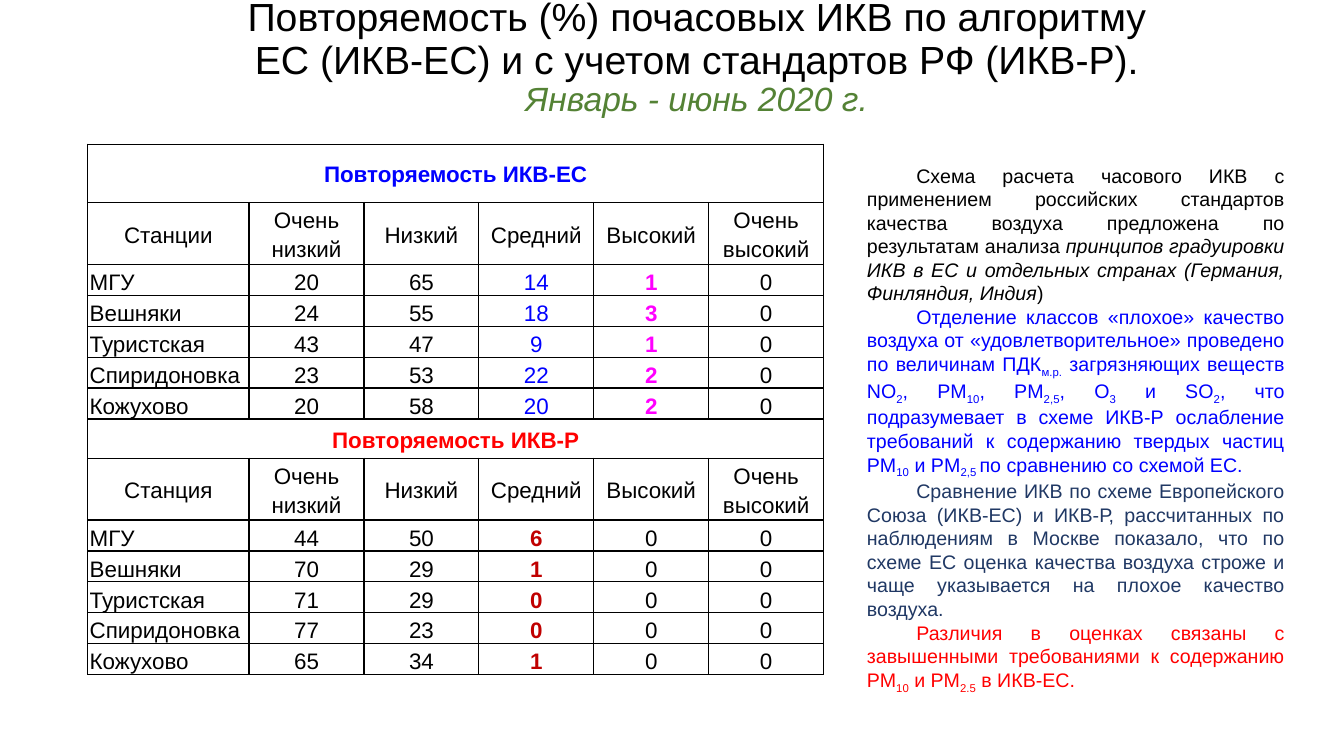
import pptx
import pptx.dml.color
import pptx.enum.text
import pptx.oxml
import pptx.oxml.ns
import pptx.util
from pptx.dml.color import RGBColor
from pptx.enum.text import MSO_ANCHOR, PP_ALIGN

SLIDE_WIDTH = pptx.util.Inches(13.33)
SLIDE_HEIGHT = pptx.util.Inches(7.5)
FONT = "Arial"

BLACK = RGBColor(0x00, 0x00, 0x00)
BLUE = RGBColor(0x00, 0x00, 0xFF)
RED = RGBColor(0xFF, 0x00, 0x00)
DARK_RED = RGBColor(0xC0, 0x00, 0x00)
MAGENTA = RGBColor(0xFF, 0x00, 0xFF)
GREEN = RGBColor(0x54, 0x82, 0x35)
NAVY = RGBColor(0x20, 0x38, 0x64)

# Table grid, in inches
COLUMN_WIDTHS = [1.6] + [1.14] * 5
HEADER_HEIGHT, DATA_HEIGHT = 0.58, 0.29
LEVELS = ["Очень низкий", "Низкий", "Средний", "Высокий", "Очень высокий"]
STATIONS = ["МГУ", "Вешняки", "Туристская", "Спиридоновка", "Кожухово"]

# Per section: title, its colour and height, station heading,
# values by station, (colour, bold) of marked columns
SECTIONS = [
    ("Повторяемость ИКВ-ЕС", BLUE, 0.58, "Станции",
     [(20, 65, 14, 1, 0), (24, 55, 18, 3, 0), (43, 47, 9, 1, 0),
      (23, 53, 22, 2, 0), (20, 58, 20, 2, 0)],
     {3: (BLUE, False), 4: (MAGENTA, True)}),
    ("Повторяемость ИКВ-Р", RED, 0.39, "Станция",
     [(44, 50, 6, 0, 0), (70, 29, 1, 0, 0), (71, 29, 0, 0, 0),
      (77, 23, 0, 0, 0), (65, 34, 1, 0, 0)],
     {3: (DARK_RED, True)}),
]

# Commentary: colour, subscript offset, runs as (text, style)
COMMENTS = [
    (BLACK, 0, [
        ("Схема расчета часового ИКВ с применением российских стандартов "
         "качества воздуха предложена по результатам анализа ", ""),
        ("принципов градуировки ИКВ в ЕС и отдельных странах "
         "(Германия, Финляндия, Индия", "italic"),
        (")", "")]),
    (BLUE, -25, [
        ("Отделение классов «плохое» качество воздуха от "
         "«удовлетворительное» проведено по величинам ПДК", ""),
        ("м.р.", "sub"), (" загрязняющих веществ NO", ""), ("2", "sub"),
        (", PM", ""), ("10", "sub"), (", PM", ""), ("2,5", "sub"),
        (", O", ""), ("3", "sub"), (" и SO", ""), ("2", "sub"),
        (", что подразумевает в схеме ИКВ-Р ослабление требований "
         "к содержанию твердых частиц PM", ""),
        ("10", "sub"), (" и PM", ""), ("2,5 ", "sub"),
        ("по сравнению со схемой ЕС.", "")]),
    (NAVY, 0, [
        ("Сравнение ИКВ по схеме Европейского Союза (ИКВ-ЕС) и ИКВ-Р, "
         "рассчитанных по наблюдениям в Москве показало, что по схеме ЕС "
         "оценка качества воздуха строже и чаще указывается на плохое "
         "качество воздуха.", "")]),
    (RED, -30, [
        ("Различия в оценках связаны с завышенными требованиями "
         "к содержанию РМ", ""),
        ("10", "sub"), (" и РМ", ""), ("2.5", "sub"), (" в ИКВ-ЕС.", "")]),
]


def set_font(font, size, color, bold=False):
    font.name, font.size = FONT, pptx.util.Pt(size)
    font.color.rgb, font.bold = color, bold


def add_text_frame(slide, left, top, width, height, anchor):
    shape = slide.shapes.add_textbox(
        *(pptx.util.Inches(value) for value in (left, top, width, height)))
    frame = shape.text_frame
    frame.word_wrap = True
    frame.vertical_anchor = anchor
    return frame


def add_title(slide):
    frame = add_text_frame(slide, 0.92, 0.4, 11.98, 0.9, MSO_ANCHOR.BOTTOM)
    frame.margin_bottom = pptx.util.Inches(0.12)
    lines = [("Повторяемость (%) почасовых ИКВ по алгоритму\v"
              "ЕС (ИКВ-ЕС) и с учетом стандартов РФ (ИКВ-Р).", 28, BLACK),
             ("Январь - июнь 2020 г.", 24, GREEN)]
    for index, (text, size, color) in enumerate(lines):
        paragraph = frame.add_paragraph() if index else frame.paragraphs[0]
        paragraph.text = text
        paragraph.alignment = PP_ALIGN.CENTER
        paragraph.line_spacing = 0.9
        set_font(paragraph.font, size, color)
        paragraph.font.italic = color == GREEN


def add_borders(cell):
    properties = cell._tc.get_or_add_tcPr()
    for index, side in enumerate(("lnL", "lnR", "lnT", "lnB")):
        properties.insert(index, pptx.oxml.parse_xml(
            f'<a:{side} {pptx.oxml.ns.nsdecls("a")} w="12700"><a:solidFill>'
            f'<a:srgbClr val="{BLACK}"/></a:solidFill></a:{side}>'))


def fill_cell(cell, text, color=BLACK, bold=False,
              anchor=MSO_ANCHOR.MIDDLE, alignment=PP_ALIGN.CENTER):
    cell.margin_left = cell.margin_right = pptx.util.Inches(0.02)
    cell.margin_top = cell.margin_bottom = 0
    cell.vertical_anchor = anchor
    paragraph = cell.text_frame.paragraphs[0]
    paragraph.text = text
    paragraph.alignment = alignment
    paragraph.line_spacing = 1.15
    set_font(paragraph.font, 16, color, bold)


def fill_section(table, first_row, section):
    title, title_color, title_height, heading, values, marks = section
    heights = [title_height, HEADER_HEIGHT] + [DATA_HEIGHT] * len(STATIONS)
    for offset, height in enumerate(heights):
        table.rows[first_row + offset].height = pptx.util.Inches(height)

    # Section title and column headings
    title_cell = table.cell(first_row, 0)
    title_cell.merge(table.cell(first_row, len(LEVELS)))
    fill_cell(title_cell, title, title_color, True)
    for column, text in enumerate([heading] + LEVELS):
        fill_cell(table.cell(first_row + 1, column), text)

    # Stations and their values
    for row, (station, numbers) in enumerate(zip(STATIONS, values), first_row + 2):
        fill_cell(table.cell(row, 0), station,
                  anchor=MSO_ANCHOR.BOTTOM, alignment=PP_ALIGN.LEFT)
        for column, number in enumerate(numbers, 1):
            color, bold = marks.get(column, (BLACK, False))
            fill_cell(table.cell(row, column), str(number), color, bold,
                      MSO_ANCHOR.BOTTOM)


def add_frequency_table(slide):
    section_rows = 2 + len(STATIONS)
    table = slide.shapes.add_table(
        section_rows * len(SECTIONS), len(COLUMN_WIDTHS),
        pptx.util.Inches(0.87), pptx.util.Inches(1.43),
        pptx.util.Inches(sum(COLUMN_WIDTHS)), pptx.util.Inches(5.03)).table
    table.first_row = table.horz_banding = False
    for column, width in zip(table.columns, COLUMN_WIDTHS):
        column.width = pptx.util.Inches(width)
    for cell in table.iter_cells():
        cell.fill.background()
        add_borders(cell)
    for index, section in enumerate(SECTIONS):
        fill_section(table, index * section_rows, section)


def add_commentary(slide):
    frame = add_text_frame(slide, 8.5, 1.62, 4.34, 5.28, MSO_ANCHOR.MIDDLE)
    for index, (color, subscript, runs) in enumerate(COMMENTS):
        paragraph = frame.add_paragraph() if index else frame.paragraphs[0]
        paragraph.alignment = PP_ALIGN.JUSTIFY
        paragraph._p.get_or_add_pPr().set("indent", str(pptx.util.Inches(0.49)))
        set_font(paragraph.font, 14, color)
        for text, style in runs:
            run = paragraph.add_run()
            run.text = text
            if style == "italic":
                run.font.italic = True
            elif style == "sub":
                run.font._element.set("baseline", str(subscript * 1000))


def main():
    presentation = pptx.Presentation()
    presentation.slide_width = SLIDE_WIDTH
    presentation.slide_height = SLIDE_HEIGHT
    slide = presentation.slides.add_slide(presentation.slide_layouts[6])
    add_title(slide)
    add_frequency_table(slide)
    add_commentary(slide)
    presentation.save("out.pptx")


if __name__ == "__main__":
    main()
